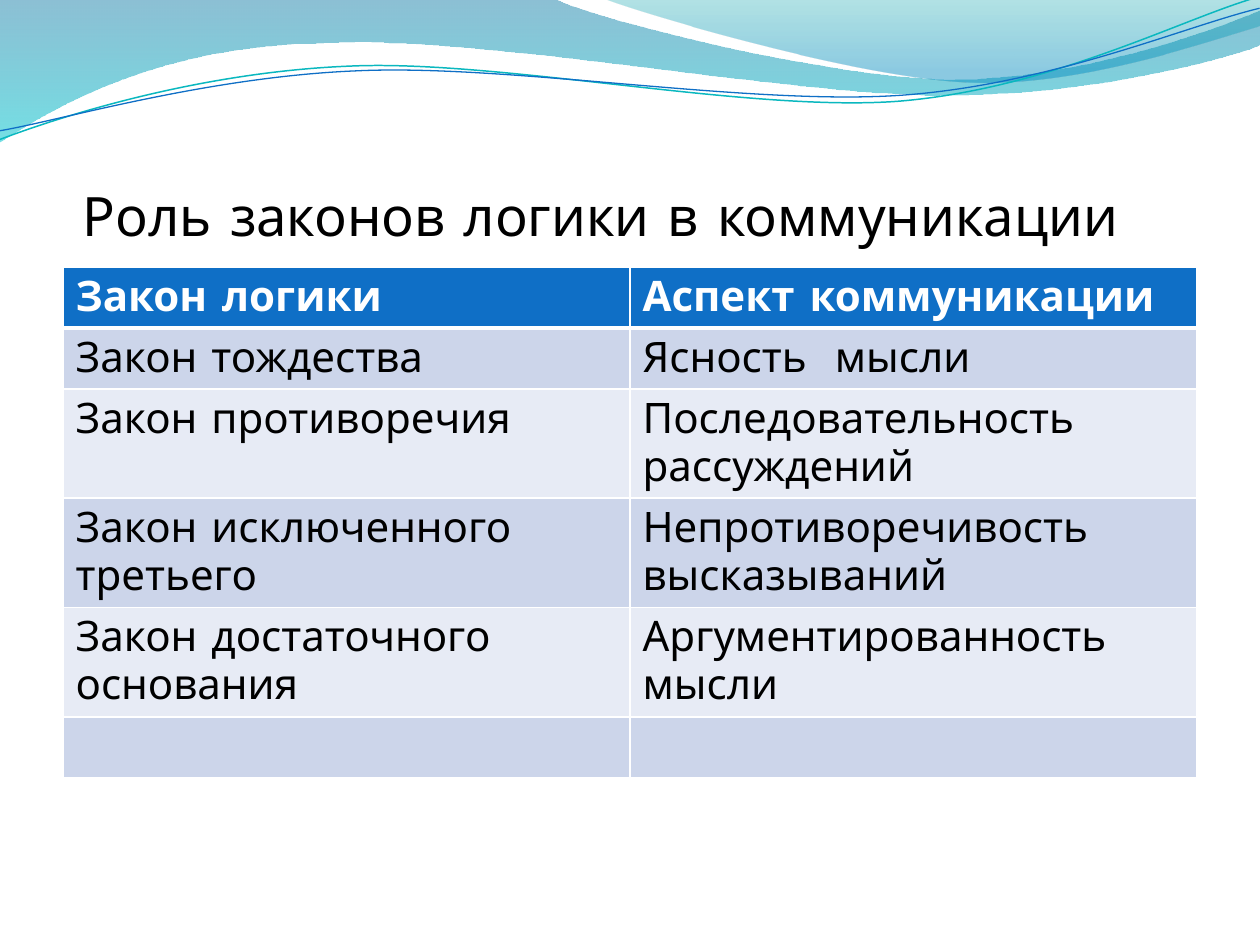
"""Build a slide with a wave header, a title and a table of the laws of logic."""
from lxml import etree
from pptx import Presentation
from pptx.dml.color import RGBColor
from pptx.enum.text import MSO_ANCHOR, MSO_AUTO_SIZE, PP_ALIGN
from pptx.oxml.ns import qn
from pptx.util import Pt

BOTTOM, LEFT, FIXED = MSO_ANCHOR.BOTTOM, PP_ALIGN.LEFT, MSO_AUTO_SIZE.NONE
PX = 914400 / 126
FACE = "Comic Neue"

TITLE = "Роль законов логики в коммуникации"
ROWS = [
    ("Закон логики", "Аспект коммуникации"),
    ("Закон тождества", "Ясность  мысли"),
    ("Закон противоречия", "Последовательность рассуждений"),
    ("Закон исключенного третьего", "Непротиворечивость высказываний"),
    ("Закон достаточного основания", "Аргументированность мысли"),
    ("", ""),
]
HIGH = 52
HEAD, BANDS = "0F6FC6", ("E7EBF5", "CCD5EA")

FILLS = [
    ([(0, 0), (554, -1), (600, 21, 837, 79, 955, 79),
      (1075, 79, 1207, 33, 1260, 11), (1261, 45),
      (1238, 55, 1096, 96, 940, 95), (784, 95, 481, 35, 324, 43),
      (161, 45, 58, 105, -1, 142), (0, 0)],
     [(0, "0074A1", 45), (1, "00C6CF", 55)]),
    ([(604, -1), (641, 14, 859, 78, 969, 82),
      (1079, 87, 1211, 40, 1260, 26), (1260, 0), (604, -1)],
     [(0, "00A1A9", 30), (0.8, "008BBF", 45)]),
]
TILT = 357.3
LINES = [
    ([(-3, 110), (58, 90, 199, 52, 350, 53), (499, 53, 745, 118, 896, 114),
      (1049, 109, 1184, 45, 1260, 27)], "0AB8BF", 0.85),
    ([(-2, 101), (57, 94, 207, 57, 357, 58), (509, 58, 750, 112, 902, 108),
      (1052, 104, 1188, 52, 1262, 38)], "0F6FC6", 0.75),
]


def emu(px):
    return round(px * PX)


def color(code):
    return RGBColor.from_string(code)


def assign(obj, **vals):
    for key, val in vals.items():
        setattr(obj, key, val)


def draw(shapes, path, close):
    start, *steps = path
    pen = shapes.build_freeform(*map(emu, start), scale=1.0)
    for step in steps:
        spots = [emu(n) for n in step]
        pen.add_line_segments(list(zip(spots[::2], spots[1::2])), close=False)
    shape = pen.convert_to_shape()
    shape.shadow.inherit = False
    track = next(shape._element.iter(qn("a:path")))
    legs = iter(track.findall(qn("a:lnTo")))
    for step in steps:
        if len(step) == 2:
            next(legs)
            continue
        curve = etree.Element(qn("a:cubicBezTo"))
        trio = [next(legs) for _ in range(3)]
        trio[0].addprevious(curve)
        for leg in trio:
            curve.append(leg[0])
            track.remove(leg)
    if close:
        etree.SubElement(track, qn("a:close"))
    return shape


def blend(shape, stops):
    shape.line.fill.background()
    shape.fill.gradient()
    shape.fill.gradient_angle = 270
    for stop, (pos, code, alpha) in zip(shape.fill.gradient_stops, stops):
        stop.position = pos
        stop.color.rgb = color(code)
    for tag, (pos, code, alpha) in zip(shape._element.iter(qn("a:srgbClr")), stops):
        etree.SubElement(tag, qn("a:alpha"), val=str(alpha * 1000))


def write(para, text, code, **vals):
    run = para.add_run()
    run.text = text
    assign(run.font, name=FACE, **vals)
    run.font.color.rgb = color(code)


def edge(cell, head):
    props = cell._tc.get_or_add_tcPr()
    for side in "LRTB":
        width = 3 if head and side == "B" else 1
        line = etree.SubElement(props, qn("a:ln" + side), w=str(Pt(width)))
        fill = etree.SubElement(line, qn("a:solidFill"))
        etree.SubElement(fill, qn("a:srgbClr"), val="FFFFFF")


def fill_table(shapes):
    frame = shapes.add_table(len(ROWS), 2, emu(63), emu(267), emu(1134), emu(HIGH * len(ROWS)))
    for r, texts in enumerate(ROWS):
        for c, text in enumerate(texts):
            cell = frame.table.cell(r, c)
            edge(cell, r == 0)
            cell.fill.solid()
            cell.fill.fore_color.rgb = color(BANDS[r % 2] if r else HEAD)
            para = cell.text_frame.paragraphs[0]
            if text:
                write(para, text, "000000" if r else "FFFFFF", size=Pt(24), bold=r == 0)
            else:
                tail = etree.SubElement(para._p, qn("a:endParaRPr"), sz="2400")
                etree.SubElement(tail, qn("a:latin"), typeface=FACE)
    frame.height = emu(529)


def main():
    deck = Presentation()
    assign(deck, slide_width=emu(1260), slide_height=emu(945))
    slide = deck.slides.add_slide(deck.slide_layouts[5])
    shapes = slide.shapes
    for path, stops in FILLS:
        blend(draw(shapes, path, True), stops)
    for path, code, width in LINES:
        shape = draw(shapes, path, False)
        shape.rotation = TILT
        shape.fill.background()
        shape.line.color.rgb = color(code)
        shape.line.width = Pt(width)

    title = shapes.title
    shapes._spTree.append(title._element)
    assign(title, left=emu(63), top=emu(97), width=emu(1134), height=emu(158))
    frame = title.text_frame
    assign(frame, margin_left=emu(20), margin_right=0, margin_top=emu(6), margin_bottom=emu(8),
           vertical_anchor=BOTTOM, word_wrap=True, auto_size=FIXED)
    frame.paragraphs[0].alignment = LEFT
    write(frame.paragraphs[0], TITLE, "000000", size=Pt(31))
    fill_table(shapes)
    deck.save("out.pptx")


if __name__ == "__main__":
    main()
